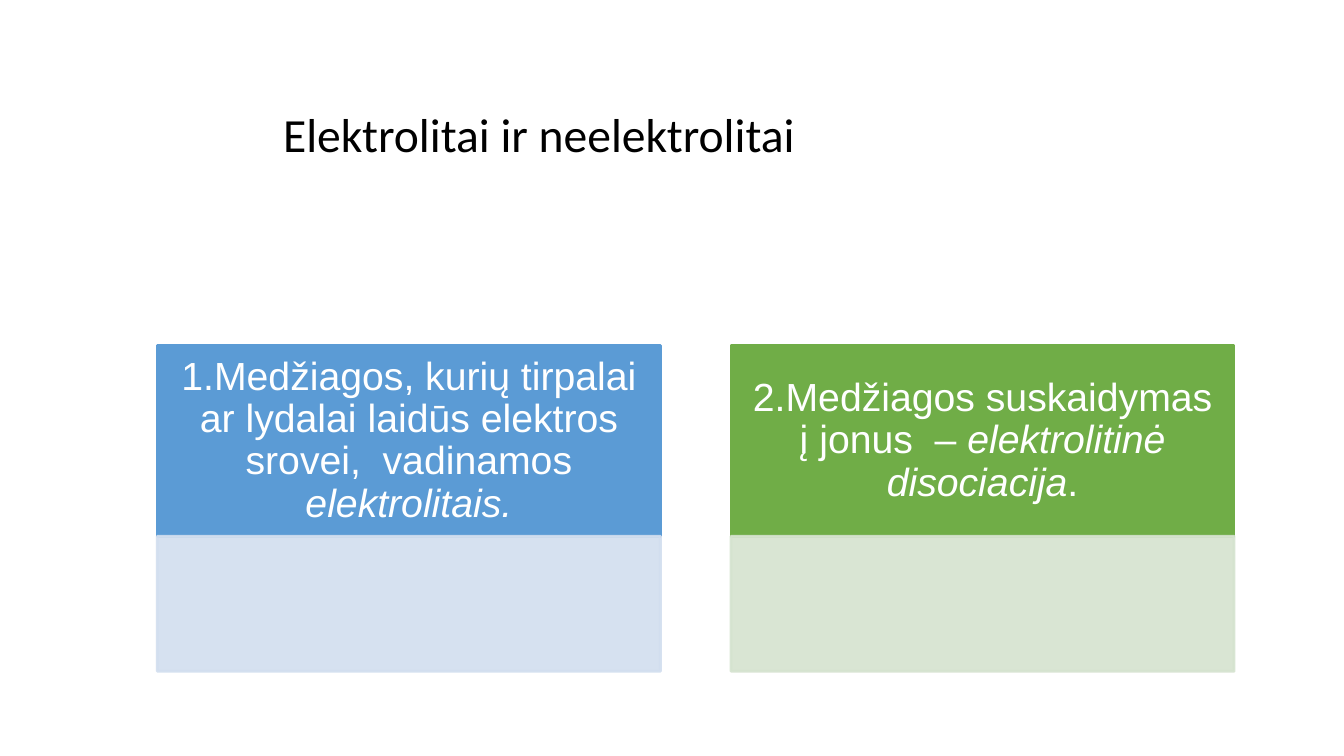
from lxml import etree
from pptx import Presentation
from pptx.dml.color import RGBColor
from pptx.enum.shapes import MSO_SHAPE
from pptx.enum.text import MSO_ANCHOR, PP_ALIGN
from pptx.oxml.ns import qn
from pptx.util import Inches, Pt

BLACK = RGBColor(0x00, 0x00, 0x00)
WHITE = RGBColor(0xFF, 0xFF, 0xFF)
BLUE = RGBColor(0x5B, 0x9B, 0xD5)
PALE_BLUE = RGBColor(0xD2, 0xDE, 0xEF)
GREEN = RGBColor(0x70, 0xAD, 0x47)
PALE_GREEN = RGBColor(0xD5, 0xE3, 0xCF)

CARD_LEFT, CARD_STEP, CARD_WIDTH = 1.56, 5.69, 4.99
HEAD_TOP, HEAD_HEIGHT, BODY_HEIGHT = 3.43, 1.89, 1.34

# Each card: head colour, body colour, (text, italic) runs
CARDS = [
    (BLUE, PALE_BLUE, [
        ("1.Medžiagos, kurių tirpalai ar lydalai laidūs elektros srovei,  vadinamos ", False),
        ("elektrolitais.", True),
    ]),
    (GREEN, PALE_GREEN, [
        ("2.Medžiagos suskaidymas į jonus  – ", False),
        ("elektrolitinė disociacija", True),
        (".", False),
    ]),
]


def add_box(left, top, height, color):
    sp = s.shapes.add_shape(MSO_SHAPE.RECTANGLE, Inches(left), Inches(top),
                            Inches(CARD_WIDTH), Inches(height))
    sp.shadow.inherit = False
    sp.fill.solid()
    sp.fill.fore_color.rgb = color
    sp.line.color.rgb = color
    sp.line.width = Pt(2)
    return sp


def add_run(p, text, font, size, color, italic=False):
    r = p.add_run()
    r.text = text
    r.font.name = font
    r.font.size = Pt(size)
    r.font.color.rgb = color
    r.font.italic = italic


prs = Presentation()
prs.slide_width = Inches(13.33)
prs.slide_height = Inches(7.5)
s = prs.slides.add_slide(prs.slide_layouts[6])

title = s.shapes.add_textbox(Inches(2.71), Inches(0.64), Inches(6.6), Inches(1.44))
tf = title.text_frame
tf.word_wrap = True
tf.vertical_anchor = MSO_ANCHOR.MIDDLE
p = tf.paragraphs[0]
p.line_spacing = 0.9
add_run(p, "Elektrolitai ir neelektrolitai", "Calibri", 34, BLACK)

for i, (head_color, body_color, runs) in enumerate(CARDS):
    left = CARD_LEFT + i * CARD_STEP

    head = add_box(left, HEAD_TOP, HEAD_HEIGHT, head_color)
    tf = head.text_frame
    tf.word_wrap = True
    tf.vertical_anchor = MSO_ANCHOR.MIDDLE
    tf.margin_left = tf.margin_right = Inches(0.2)
    tf.margin_top = tf.margin_bottom = Inches(0.12)
    p = tf.paragraphs[0]
    p.alignment = PP_ALIGN.CENTER
    p.line_spacing = 0.9
    for text, italic in runs:
        add_run(p, text, "Arial", 28, WHITE, italic)

    body = add_box(left, HEAD_TOP + HEAD_HEIGHT, BODY_HEIGHT, body_color)
    # 90 % opacity for both the fill and the outline
    for clr in body.element.spPr.iter(qn("a:srgbClr")):
        etree.SubElement(clr, qn("a:alpha"), val="90000")

prs.save("out.pptx")
